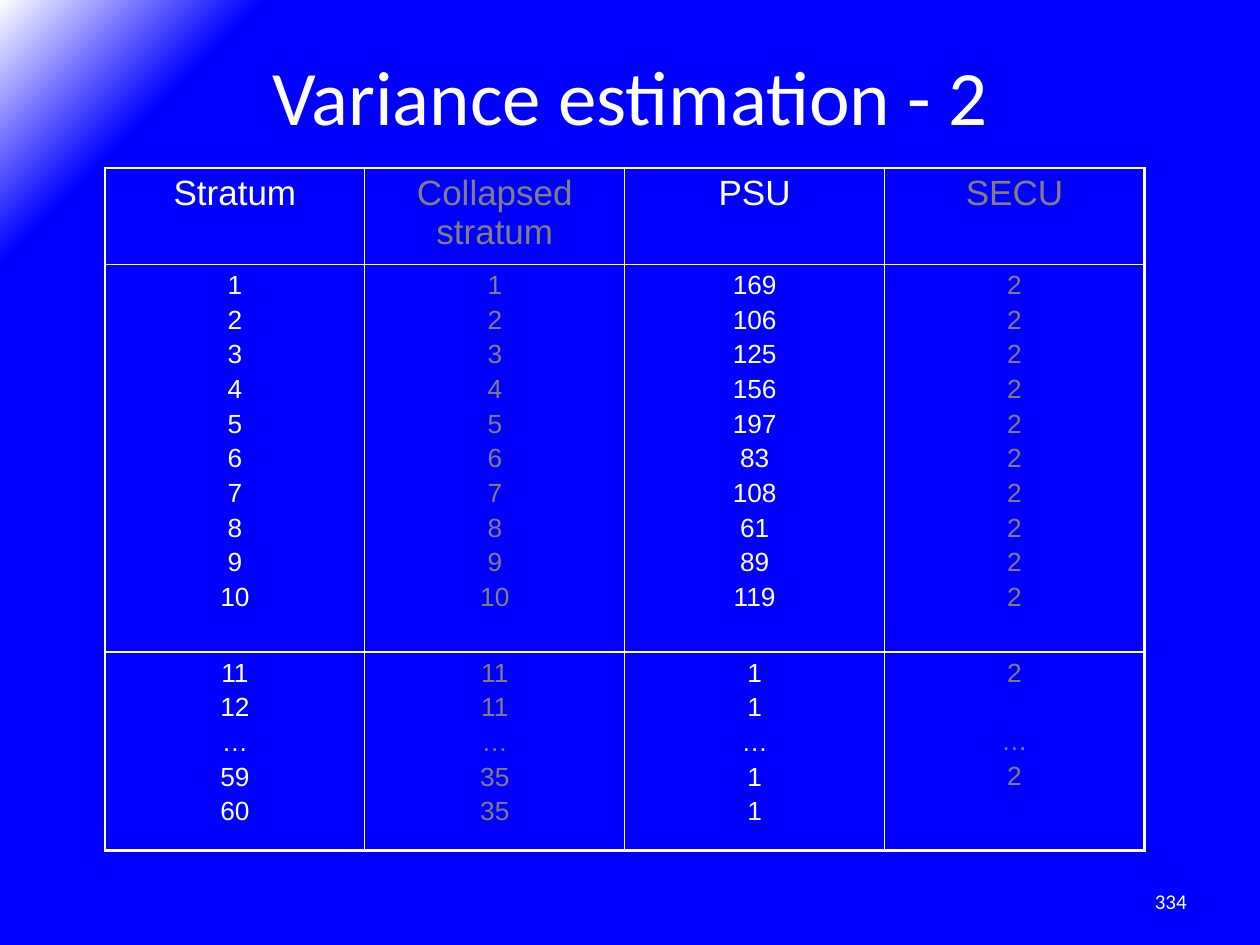
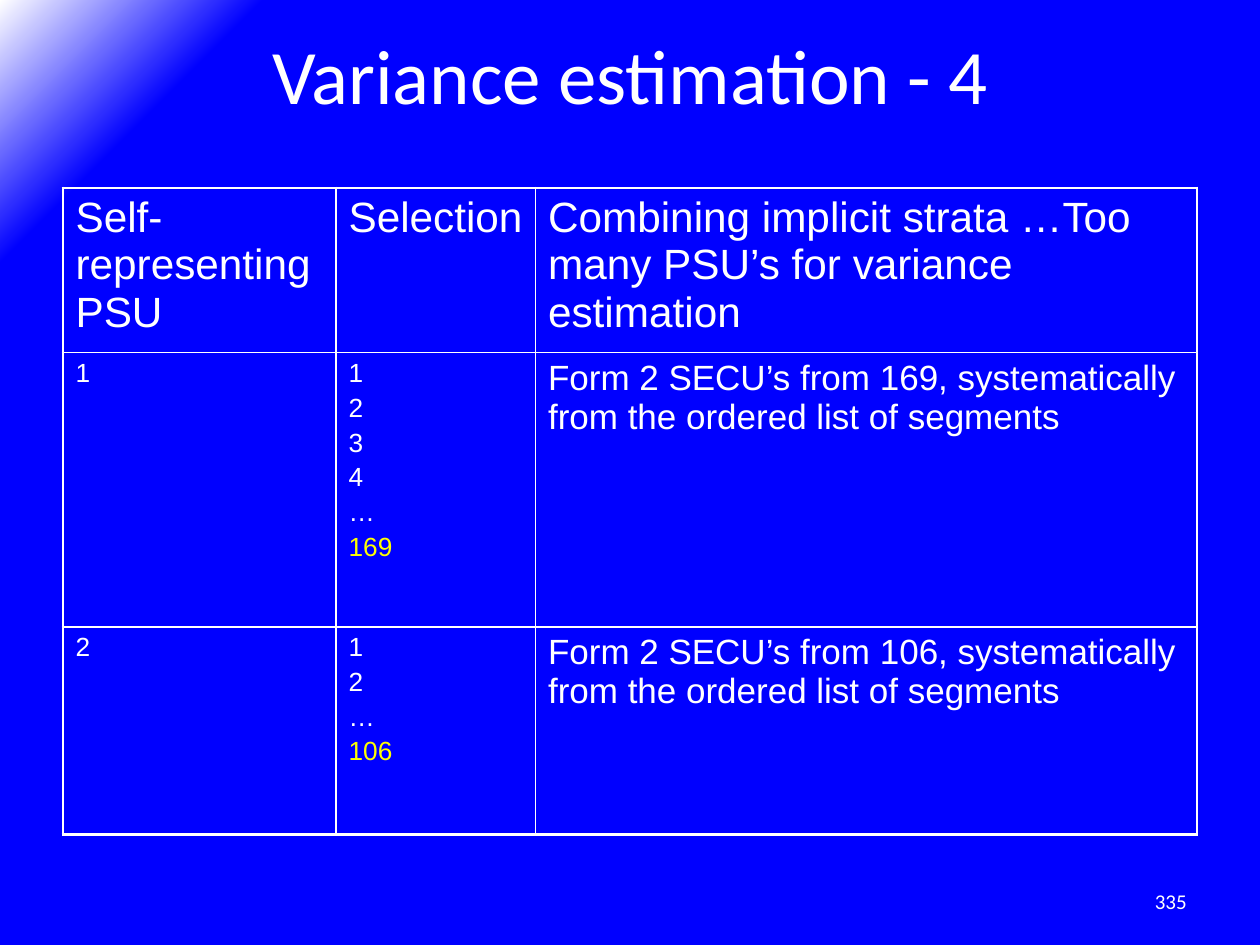
from lxml import etree
from pptx import Presentation
from pptx import util as u
from pptx.dml.color import RGBColor
from pptx.enum import text
from pptx.oxml import parse_xml
from pptx.oxml.ns import nsdecls, qn

WHITE = RGBColor(0xFF, 0xFF, 0xFF)
GREY = RGBColor(0x7F, 0x7F, 0x7F)
YELLOW = RGBColor(0xFF, 0xFF, 0x00)
BLUE = RGBColor(0x00, 0x00, 0xFF)

LEFT, CENTER, RIGHT = text.PP_ALIGN.LEFT, text.PP_ALIGN.CENTER, text.PP_ALIGN.RIGHT
OUTER, INNER = 2.25, 1
BODY_SIZE = 18
ELLIPSIS = "…"


class Deck:
    title_font, body_font = "Calibri", "Arial"

    def __init__(self):
        self.prs = Presentation()
        self.prs.slide_width, self.prs.slide_height = u.Inches(12), u.Inches(9)
        self.slide = None
        self.set_background()

    def set_background(self):
        stops = "".join(
            f'<a:gs pos="{pos}"><a:srgbClr val="{color}"/></a:gs>'
            for pos, color in ((0, BLUE), (88000, BLUE), (100000, WHITE))
        )
        background = parse_xml(
            f'<p:bg {nsdecls("p", "a")}><p:bgPr><a:gradFill rotWithShape="0">'
            f'<a:gsLst>{stops}</a:gsLst><a:path path="circle">'
            '<a:fillToRect l="100000" t="100000"/></a:path></a:gradFill>'
            '<a:effectLst/></p:bgPr></p:bg>'
        )
        content = self.prs.slide_master.element.find(qn("p:cSld"))
        for old in content.findall(qn("p:bg")):
            content.remove(old)
        content.insert(0, background)

    def add_slide(self, title, title_top, number):
        self.slide = self.prs.slides.add_slide(self.prs.slide_layouts[6])
        self.label(number, (8.6, 8.34, 2.8, 0.48), 14.4, RIGHT, text.MSO_ANCHOR.MIDDLE)
        self.label(title, (0.6, title_top, 10.8, 1.5), 52.8, CENTER, text.MSO_ANCHOR.TOP)

    def run(self, paragraph, words, size, color, font):
        run = paragraph.add_run()
        run.text = words
        run.font.size = u.Pt(size)
        run.font.name = font
        run.font.color.rgb = color

    def label(self, words, box, size, align, anchor):
        frame = self.slide.shapes.add_textbox(*map(u.Inches, box)).text_frame
        frame.word_wrap = True
        frame.vertical_anchor = anchor
        frame.margin_top = frame.margin_bottom = u.Inches(0.06)
        paragraph = frame.paragraphs[0]
        paragraph.alignment = align
        self.run(paragraph, words, size, WHITE, self.title_font)

    def table(self, left, top, widths, heights, cells, align):
        grid = self.slide.shapes.add_table(
            len(heights), len(widths), u.Inches(left), u.Inches(top),
            u.Inches(sum(widths)), u.Inches(sum(heights)),
        ).table
        grid.first_row = grid.horz_banding = False
        for column, width in zip(grid.columns, widths):
            column.width = u.Inches(width)
        for row, height in zip(grid.rows, heights):
            row.height = u.Inches(height)
        last_row, last_column = len(heights) - 1, len(widths) - 1
        for r, row_cells in enumerate(cells):
            for c, (lines, size, color) in enumerate(row_cells):
                cell = grid.cell(r, c)
                edges = {"lnL": c == 0, "lnR": c == last_column,
                         "lnT": r == 0, "lnB": r == last_row}
                self.borders(cell, edges)
                cell.fill.background()
                cell.margin_left = cell.margin_right = u.Inches(0.12)
                cell.margin_top = cell.margin_bottom = u.Inches(0.06)
                self.cell_lines(cell.text_frame, lines, size, color, align)

    def borders(self, cell, edges):
        properties = cell._tc.get_or_add_tcPr()
        for side, is_outer in edges.items():
            width = u.Pt(OUTER if is_outer else INNER)
            line = etree.SubElement(properties, qn(f"a:{side}"), w=str(int(width)))
            fill = etree.SubElement(line, qn("a:solidFill"))
            etree.SubElement(fill, qn("a:srgbClr"), val=str(WHITE))

    def cell_lines(self, frame, lines, size, color, align):
        paragraph = frame.paragraphs[0]
        skipped = 0
        for index, line in enumerate(lines):
            if line is None:
                skipped += 1
                continue
            words, line_color = line if isinstance(line, tuple) else (line, color)
            if index:
                paragraph = frame.add_paragraph()
            paragraph.alignment = align
            if skipped:
                paragraph.space_before = u.Pt(round(size * (0.17 + 1.32 * skipped), 1))
                skipped = 0
            else:
                spacing = etree.SubElement(paragraph._p.get_or_add_pPr(), qn("a:spcBef"))
                etree.SubElement(spacing, qn("a:spcPct"), val="20000")
            self.run(paragraph, words, size, line_color, self.body_font)


def strata_slide(deck):
    deck.add_slide("Variance estimation - 2", 0.4, "334")
    first_ten = [str(n) for n in range(1, 11)]
    columns = [
        ("Stratum", WHITE, first_ten, ["11", "12", ELLIPSIS, "59", "60"]),
        ("Collapsed stratum", GREY, first_ten, ["11", "11", ELLIPSIS, "35", "35"]),
        ("PSU", WHITE, "169 106 125 156 197 83 108 61 89 119".split(),
         ["1", "1", ELLIPSIS, "1", "1"]),
        ("SECU", GREY, ["2"] * 10, ["2", None, ELLIPSIS, "2"]),
    ]
    cells = [
        [([heading], 24, color) for heading, color, *_ in columns],
        [(upper, BODY_SIZE, color) for _, color, upper, _ in columns],
        [(lower, BODY_SIZE, color) for _, color, _, lower in columns],
    ]
    deck.table(1, 1.6, [9.9 / 4] * 4, [0.92, 3.69, 1.89], cells, CENTER)


def selection_slide(deck):
    deck.add_slide("Variance estimation - 4", 0.2, "335")
    headings = ["Self-representing PSU", "Selection",
                "Combining implicit strata …Too many PSU’s for variance estimation"]
    cells = [[([heading], 29, WHITE) for heading in headings]]
    for psu, shown, total in (("1", "1234", "169"), ("2", "12", "106")):
        plan = (f"Form 2 SECU’s from {total}, systematically "
                "from the ordered list of segments")
        cells.append([
            ([psu], BODY_SIZE, WHITE),
            ([*shown, ELLIPSIS, (total, YELLOW)], BODY_SIZE, WHITE),
            ([plan], 24, WHITE),
        ])
    deck.table(0.6, 1.79, [2.6, 1.9, 6.3], [1.56, 2.61, 1.98], cells, LEFT)


def main():
    deck = Deck()
    strata_slide(deck)
    selection_slide(deck)
    deck.prs.save("out.pptx")


if __name__ == "__main__":
    main()
